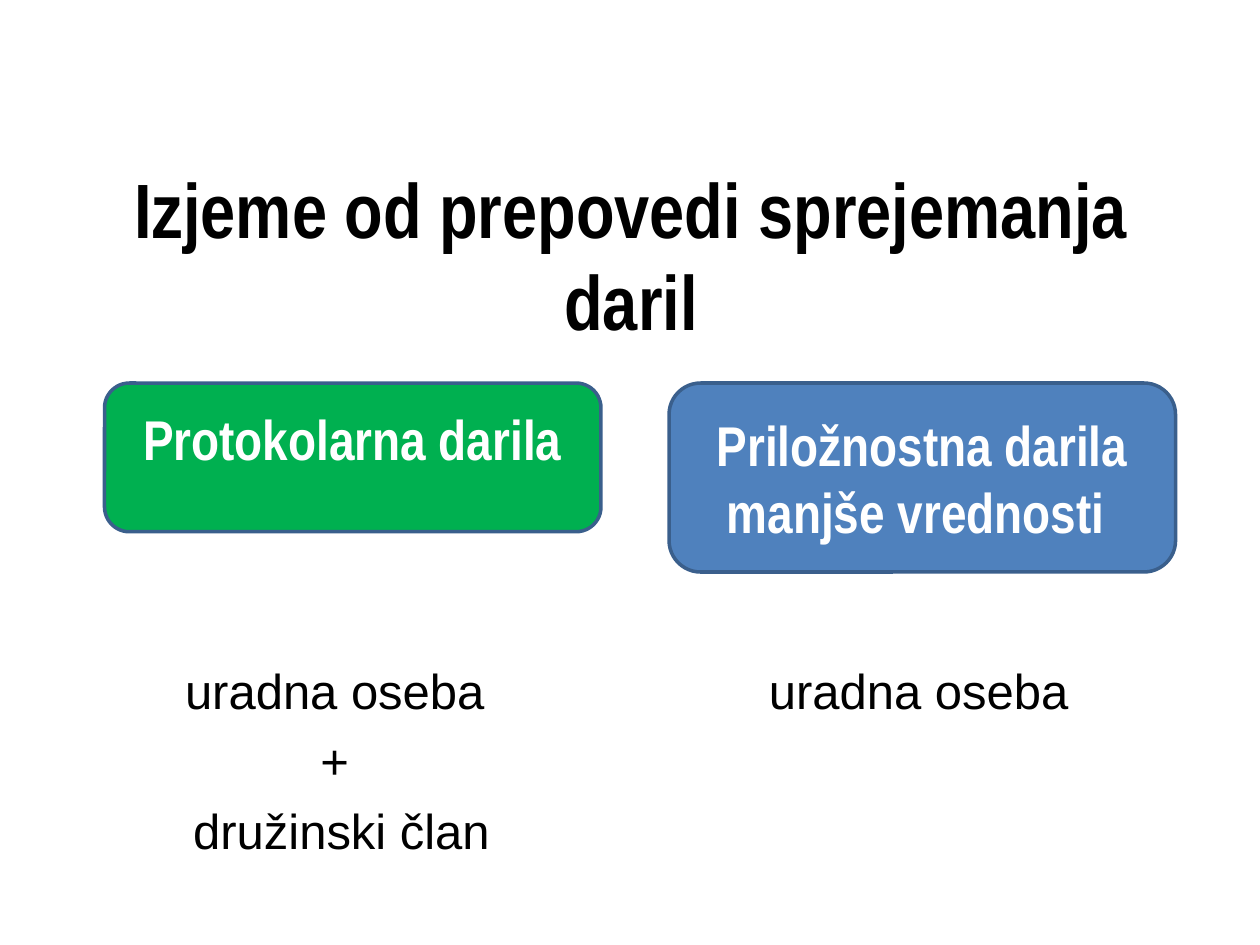
from lxml import etree
from pptx import Presentation
from pptx.dml.color import RGBColor
from pptx.enum.shapes import MSO_SHAPE
from pptx.enum.text import MSO_ANCHOR, MSO_AUTO_SIZE, PP_ALIGN
from pptx.oxml.ns import qn
from pptx.util import Inches, Pt

ROUNDED = MSO_SHAPE.ROUNDED_RECTANGLE
MIDDLE, TOP = MSO_ANCHOR.MIDDLE, MSO_ANCHOR.TOP
NO_FIT = MSO_AUTO_SIZE.NONE
CENTER = PP_ALIGN.CENTER

BLACK = RGBColor(0x00, 0x00, 0x00)
WHITE = RGBColor(0xFF, 0xFF, 0xFF)
GREEN = RGBColor(0x00, 0xB0, 0x50)
BLUE = RGBColor(0x4F, 0x81, 0xBD)
OUTLINE = RGBColor(0x3A, 0x5F, 0x8C)

COLS, ROWS = 100, 75
TWO_CONTENT = 3


class GiftSlide:
    heading_font = "Arial Narrow"
    body_font = "Arial"

    def __init__(self, prs):
        self.col = prs.slide_width / COLS
        self.row = prs.slide_height / ROWS
        self.slide = prs.slides.add_slide(prs.slide_layouts[TWO_CONTENT])

    def box(self, col, row, cols, rows):
        return (int(col * self.col), int(row * self.row),
                int(cols * self.col), int(rows * self.row))

    def place(self, sp, area):
        sp.left, sp.top, sp.width, sp.height = self.box(*area)

    def add_lines(self, tf, lines, font, size, color, bold=False, anchor=MIDDLE):
        tf.word_wrap = True
        tf.auto_size = NO_FIT
        tf.vertical_anchor = anchor
        for i, line in enumerate(lines):
            p = tf.add_paragraph() if i else tf.paragraphs[0]
            p.alignment = CENTER
            p.space_before = Pt(6.5 if i else 0)
            r = p.add_run()
            r.text = line
            r.font.name, r.font.size, r.font.bold = font, Pt(size), bold
            r.font.color.rgb = color

    def title(self, text, area):
        sp = self.slide.shapes.title
        self.place(sp, area)
        self.add_lines(sp.text_frame, [text], self.heading_font, 44, BLACK, True)

    def body(self, idx, lines, area, drop):
        sp = self.slide.placeholders[idx]
        self.place(sp, area)
        tf = sp.text_frame
        tf.margin_top = int(drop * self.row)
        self.add_lines(tf, lines, self.body_font, 28, BLACK, anchor=TOP)
        for p in tf.paragraphs:
            pPr = p._p.get_or_add_pPr()
            pPr.set("marL", "0")
            pPr.set("indent", "0")
            etree.SubElement(pPr, qn("a:buNone"))

    def card(self, text, fill, area, margin_bottom=0.05):
        sp = self.slide.shapes.add_shape(ROUNDED, *self.box(*area))
        sp.shadow.inherit = False
        sp.fill.solid()
        sp.fill.fore_color.rgb = fill
        sp.line.color.rgb = OUTLINE
        sp.line.width = Pt(2)
        sp.text_frame.margin_bottom = Inches(margin_bottom)
        self.add_lines(sp.text_frame, [text], self.heading_font, 32, WHITE, True)


def main():
    prs = Presentation()
    prs.slide_width, prs.slide_height = Inches(10), Inches(7.5)
    s = GiftSlide(prs)
    s.title("Izjeme od prepovedi sprejemanja daril", (5.1, 13.9, 90, 12.5))
    recipients = [["uradna oseba ", "+ ", "družinski član"], ["uradna oseba"]]
    for i, lines in enumerate(recipients):
        s.body(i + 1, lines, (5 + i * 45.8, 29.6, 44.2, 37.4), drop=22.8)
    s.card("Priložnostna darila manjše vrednosti ", BLUE, (53.1, 30.4, 40.2, 15))
    s.card("Protokolarna darila", GREEN, (8.3, 30.4, 39.4, 11.8), margin_bottom=0.35)
    prs.save("out.pptx")


if __name__ == "__main__":
    main()
